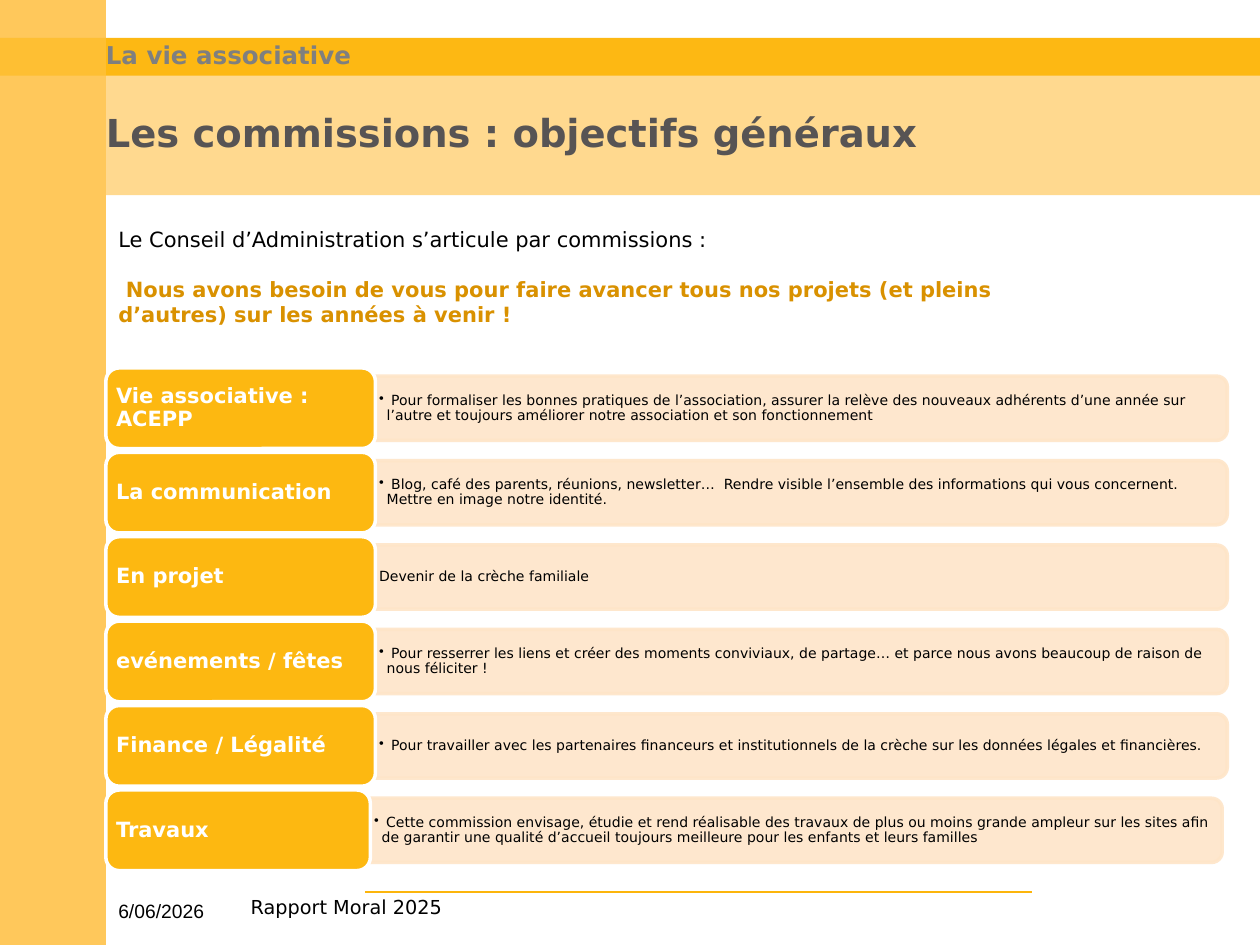
from lxml.etree import SubElement
from pptx import Presentation
from pptx.dml.color import RGBColor
from pptx.enum.shapes import MSO_CONNECTOR, MSO_SHAPE
from pptx.enum.text import MSO_ANCHOR, MSO_AUTO_SIZE, PP_ALIGN
from pptx.oxml.ns import qn
from pptx.util import Inches, Pt

BLACK = RGBColor(0x00, 0x00, 0x00)
WHITE = RGBColor(0xFF, 0xFF, 0xFF)
TITLE_GREY = RGBColor(0x57, 0x54, 0x54)
SECTION_GREY = RGBColor(0x7F, 0x7F, 0x7F)
OCHRE = RGBColor(0xD9, 0x91, 0x00)
RULE = RGBColor(0xFC, 0xB5, 0x0C)
TILE = RGBColor(0xFD, 0xB8, 0x11)
BAR = RGBColor(0xFE, 0xE5, 0xC8)

BANDS = [
    ((0.84, 0.59, 9.16, 0.96), RGBColor(0xFF, 0xD9, 0x8F)),
    ((0, 0, 0.84, 7.5), RGBColor(0xFF, 0xC8, 0x5B)),
    ((0.84, 0.3, 9.16, 0.3), RGBColor(0xFD, 0xB8, 0x13)),
    ((0, 0.3, 0.84, 0.3), RGBColor(0xFE, 0xBF, 0x33)),
]

# label, description, bulleted, label width
COMMISSIONS = [
    ("Vie associative : ACEPP",
     " Pour formaliser les bonnes pratiques de l’association, assurer la relève des nouveaux "
     "adhérents d’une année sur l’autre et toujours améliorer notre association et son "
     "fonctionnement", True, 2.14),
    ("La communication",
     " Blog, café des parents, réunions, newsletter…  Rendre visible l’ensemble des "
     "informations qui vous concernent. Mettre en image notre identité.", True, 2.14),
    ("En projet", "Devenir de la crèche familiale", False, 2.14),
    ("evénements / fêtes",
     " Pour resserrer les liens et créer des moments conviviaux, de partage… et parce nous "
     "avons beaucoup de raison de nous féliciter !", True, 2.14),
    ("Finance / Légalité",
     " Pour travailler avec les partenaires financeurs et institutionnels de la crèche sur "
     "les données légales et financières.", True, 2.14),
    ("Travaux",
     " Cette commission envisage, étudie et rend réalisable des travaux de plus ou moins "
     "grande ampleur sur les sites afin de garantir une qualité d’accueil toujours meilleure "
     "pour les enfants et leurs familles", True, 2.1),
]

LEFT = 0.84
ROW_TOP, ROW_PITCH = 2.92, 0.67
TILE_H, BAR_W, BAR_H = 0.64, 6.76, 0.51
TEXT_W, TEXT_H = 6.74, 0.46


class SlideBuilder:
    font = "DejaVu Sans"

    def __init__(self, slide):
        self.s = slide

    def frame(self, shape, insets, anchor=MSO_ANCHOR.TOP):
        tf = shape.text_frame
        tf.word_wrap = True
        tf.auto_size = MSO_AUTO_SIZE.NONE
        tf.vertical_anchor = anchor
        tf.margin_left = tf.margin_right = Inches(insets[0])
        tf.margin_top = tf.margin_bottom = Inches(insets[1])
        return tf

    def set_text(self, p, text, size, color, bold=False, spacing=None, font=None):
        p.text = text
        p.alignment = PP_ALIGN.LEFT
        p.line_spacing = spacing
        p.space_before = Pt(0)
        p.font.name = font or self.font
        p.font.size = Pt(size)
        p.font.bold = bold
        p.font.color.rgb = color

    def indent(self, p, margin, first_line):
        pPr = p._p.get_or_add_pPr()
        pPr.set("marL", str(Inches(margin)))
        pPr.set("indent", str(Inches(first_line)))
        return pPr

    def placeholder(self, ph, box, text, size, color):
        ph.left, ph.top, ph.width, ph.height = map(Inches, box)
        self.s.shapes._spTree.append(ph._element)  # in front of the bands
        p = self.frame(ph, (0, 0), MSO_ANCHOR.MIDDLE).paragraphs[0]
        SubElement(self.indent(p, 0, 0), qn("a:buNone"))
        self.set_text(p, text, size, color, bold=True, spacing=0.9)

    def shape(self, kind, box, fill, line=None):
        sp = self.s.shapes.add_shape(kind, *map(Inches, box))
        sp.shadow.inherit = False
        sp.fill.solid()
        sp.fill.fore_color.rgb = fill
        if line is None:
            sp.line.fill.background()
        else:
            sp.line.color.rgb = line
            sp.line.width = Pt(2)
        return sp

    def textbox(self, box, insets=(0.1, 0.05), anchor=MSO_ANCHOR.TOP):
        return self.frame(self.s.shapes.add_textbox(*map(Inches, box)), insets, anchor)

    def rule(self, x1, x2, y):
        line = self.s.shapes.add_connector(
            MSO_CONNECTOR.STRAIGHT, Inches(x1), Inches(y), Inches(x2), Inches(y))
        line.line.color.rgb = RULE
        line.line.width = Pt(0.75)
        SubElement(line._element.spPr, qn("a:effectLst"))

    def bar(self, left, middle):
        """Translucent bar rounded on its right end: a top-rounded shape turned by 90°."""
        box = (left + (BAR_W - BAR_H) / 2, middle - BAR_W / 2, BAR_H, BAR_W)
        sp = self.shape(MSO_SHAPE.ROUND_2_SAME_RECTANGLE, box, BAR, BAR)
        sp.rotation = 90
        for color in sp._element.spPr.iter(qn("a:srgbClr")):
            SubElement(color, qn("a:alpha"), val="89000")

    def commission(self, top, label, description, bulleted, width):
        middle, right = top + TILE_H / 2, LEFT + width
        self.bar(right, middle)

        tf = self.textbox((right, middle - TEXT_H / 2, TEXT_W, TEXT_H),
                          (0.03, 0.02), MSO_ANCHOR.MIDDLE)
        p = tf.paragraphs[0]
        if bulleted:
            SubElement(self.indent(p, 0.06, -0.06), qn("a:buChar"), char="•")
        self.set_text(p, description, 8, BLACK, spacing=0.9)

        tile = self.shape(MSO_SHAPE.ROUNDED_RECTANGLE, (LEFT, top, width, TILE_H), TILE, WHITE)
        p = self.frame(tile, (0.05, 0.02), MSO_ANCHOR.MIDDLE).paragraphs[0]
        self.set_text(p, label, 12, WHITE, bold=True, spacing=0.9)


def main():
    prs = Presentation()
    prs.slide_width, prs.slide_height = Inches(10), Inches(7.5)
    s = prs.slides.add_slide(prs.slide_layouts[1])
    b = SlideBuilder(s)

    for box, color in BANDS:
        b.shape(MSO_SHAPE.RECTANGLE, box, color)
    b.rule(2.9, 8.19, 7.08)
    b.placeholder(s.shapes.title, (LEFT, 0.59, 8.9, 0.96),
                  "Les commissions : objectifs généraux", 22, TITLE_GREY)
    b.placeholder(s.placeholders[1], (LEFT, 0.3, 4.55, 0.3),
                  "La vie associative", 14, SECTION_GREY)

    for i, row in enumerate(COMMISSIONS):
        b.commission(ROW_TOP + i * ROW_PITCH, *row)

    tf = b.textbox((LEFT, 1.75, 7.58, 0.91))
    b.set_text(tf.paragraphs[0], "Le Conseil d’Administration s’articule par commissions :",
               12, BLACK)
    p = tf.add_paragraph()
    b.indent(p, 0, 0.06)
    b.set_text(p, "Nous avons besoin de vous pour faire avancer tous nos projets "
                  "(et pleins d’autres) sur les années à venir !", 12, OCHRE, bold=True)
    p.space_before = Pt(14)

    date = b.textbox((LEFT, 7.09, 1.31, 0.4))
    b.set_text(date.paragraphs[0], "6/06/2026", 11, BLACK, font="Arial")
    footer = b.textbox((1.89, 7.06, 4.88, 0.4))
    b.set_text(footer.paragraphs[0], "Rapport Moral 2025", 11, BLACK)

    prs.save("out.pptx")


if __name__ == "__main__":
    main()
